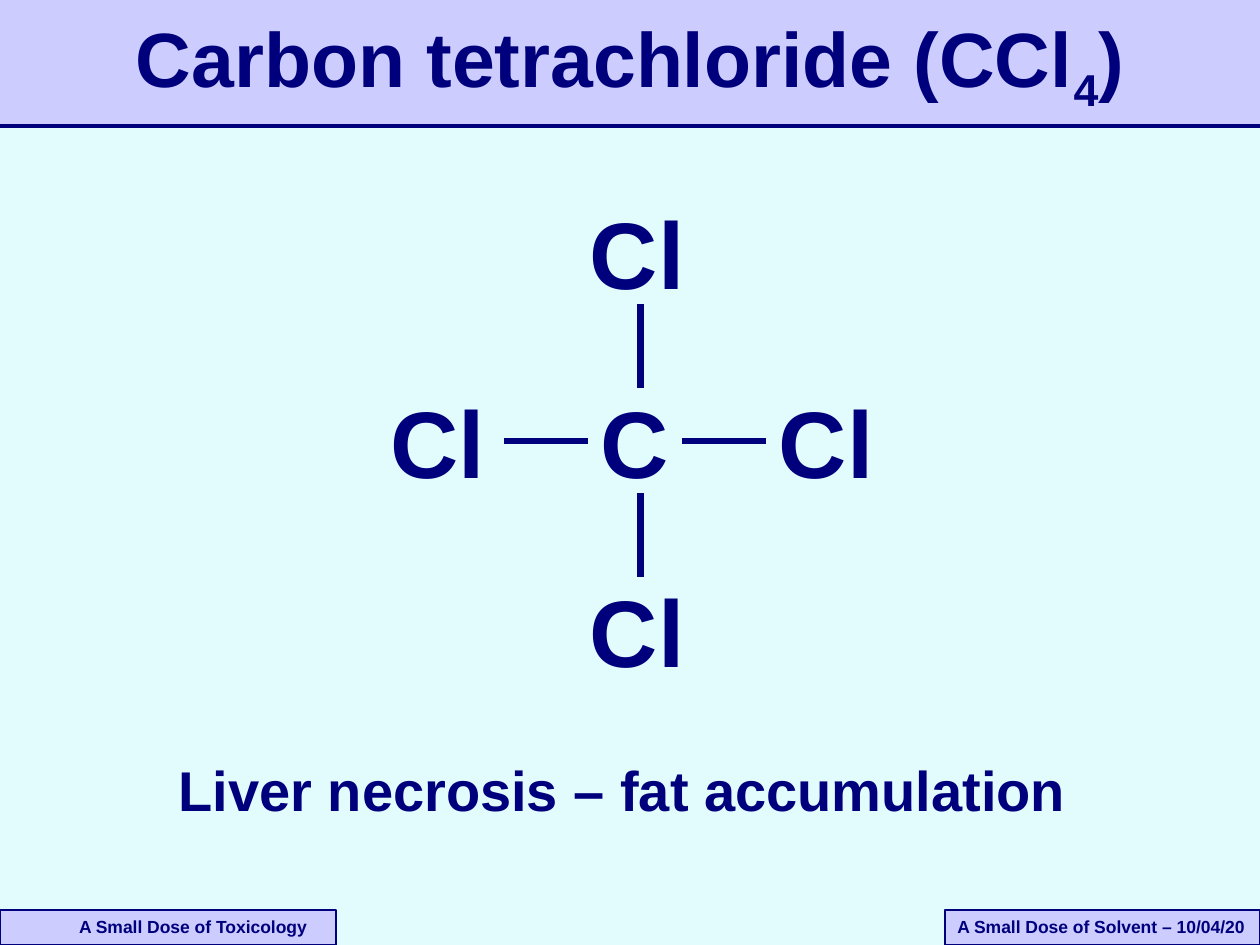
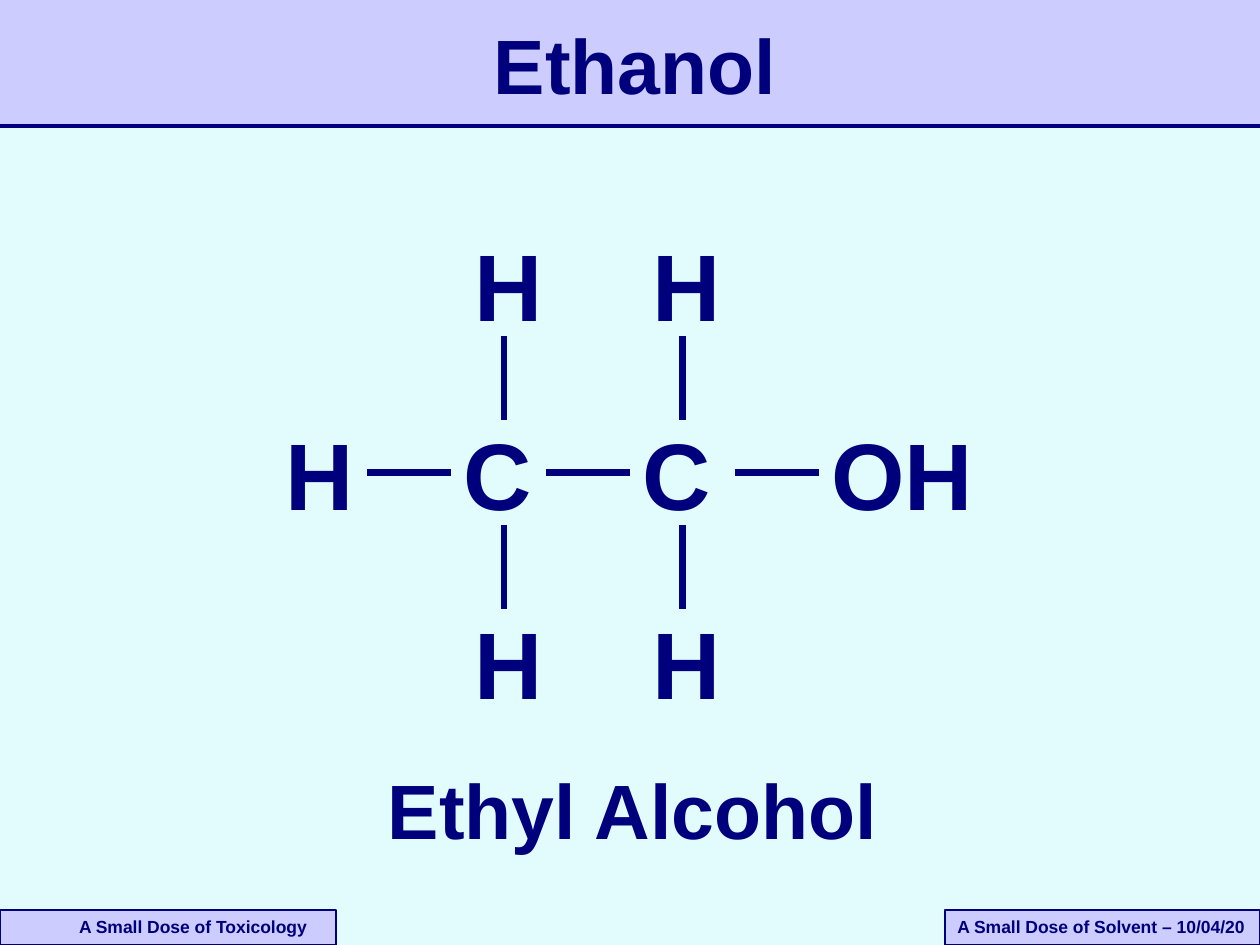
from pptx import Presentation
from pptx.dml.color import RGBColor
from pptx.enum.shapes import MSO_CONNECTOR, MSO_SHAPE
from pptx.enum.text import MSO_ANCHOR, PP_ALIGN
from pptx.oxml.ns import qn
from pptx.util import Pt
from lxml import etree

NAVY, LAVENDER, PALE_CYAN = "00007D", "CCCCFF", "E2FCFE"
FONT = "Arial"
WIDTH, HEIGHT = 720, 540
BAND_HEIGHT = 72
FOOTER_TOP, FOOTER_HEIGHT = 520, 20
TITLE_SIZE, ATOM_SIZE = 44, 54

# Distances inside a structure, measured from a carbon's text box
ROW_STEP = 108
BOND_LENGTH = 48
STEM_X, STEM_UP_Y, STEM_DOWN_Y = 30, -42, 66
BOND_Y, LEFT_BOND_X, RIGHT_BOND_X = 36, -48, 54
ATOM_HEIGHT = 72
ATOM_WIDTHS = {"C": 57.6, "H": 54, "Cl": 72, "OH": 96}


def color(value):
    return RGBColor.from_string(value)


def format_runs(p, size):
    for r in p.runs:
        r.font.name = FONT
        r.font.size = Pt(size)
        r.font.bold = True
        r.font.color.rgb = color(NAVY)


def add_text(s, text, x, y, w, h, size):
    sp = s.shapes.add_textbox(Pt(x), Pt(y), Pt(w), Pt(h))
    tf = sp.text_frame
    tf.word_wrap = True
    tf.text = text
    format_runs(tf.paragraphs[0], size)
    return sp


def add_line(s, x1, y1, x2, y2, weight):
    line = s.shapes.add_connector(MSO_CONNECTOR.STRAIGHT, Pt(x1), Pt(y1), Pt(x2), Pt(y2))
    line.line.color.rgb = color(NAVY)
    line.line.width = Pt(weight)
    etree.SubElement(line._element.spPr, qn("a:effectLst"))


def add_panel(s, x, y, w, h):
    sp = s.shapes.add_shape(MSO_SHAPE.RECTANGLE, Pt(x), Pt(y), Pt(w), Pt(h))
    sp.shadow.inherit = False
    sp.fill.solid()
    sp.fill.fore_color.rgb = color(LAVENDER)
    sp.line.fill.background()
    return sp


def add_footer(s, text, x, w, indent):
    sp = add_panel(s, x, FOOTER_TOP, w, FOOTER_HEIGHT)
    sp.line.color.rgb = color(NAVY)
    sp.line.width = Pt(0.75)
    tf = sp.text_frame
    tf.vertical_anchor = MSO_ANCHOR.TOP
    tf.word_wrap = True
    tf.margin_left = Pt(indent)
    tf.text = text
    p = tf.paragraphs[0]
    p.alignment = PP_ALIGN.LEFT
    format_runs(p, 10)


def add_base_slide(prs):
    s = prs.slides.add_slide(prs.slide_layouts[6])
    s.background.fill.solid()
    s.background.fill.fore_color.rgb = color(PALE_CYAN)
    add_panel(s, 0, 0, WIDTH, BAND_HEIGHT)
    add_line(s, 0, BAND_HEIGHT, WIDTH, BAND_HEIGHT, 2)
    add_footer(s, "A Small Dose of Solvent – 10/04/20", 540, 180, 7.2)
    add_footer(s, "A Small Dose of Toxicology", 0, 192, 45.2)
    return s


def add_title(s, parts, x, y, w):
    """Add a centred title; every second part is a subscript."""
    tf = add_text(s, "", x, y, w, 60, TITLE_SIZE).text_frame
    tf.vertical_anchor = MSO_ANCHOR.MIDDLE
    p = tf.paragraphs[0]
    p.alignment = PP_ALIGN.CENTER
    for i, part in enumerate(parts):
        r = p.add_run()
        r.text = part
        if i % 2:
            r.font._element.set("baseline", "-25000")
    format_runs(p, TITLE_SIZE)


def add_atom(s, symbol, x, y):
    add_text(s, symbol, x, y, ATOM_WIDTHS[symbol], ATOM_HEIGHT, ATOM_SIZE)


def add_bond(s, x, y, dx=0, dy=0):
    add_line(s, x, y, x + dx, y + dy, 3.5)


def add_carbon(s, x, y, partner, partner_dx):
    """Add a carbon with the same partner atom above and below it."""
    add_atom(s, "C", x, y)
    for row, stem_y in ((-1, STEM_UP_Y), (1, STEM_DOWN_Y)):
        add_atom(s, partner, x + partner_dx, y + row * ROW_STEP)
        add_bond(s, x + STEM_X, y + stem_y, dy=BOND_LENGTH)


def add_tetrachloride(s, x, y):
    add_carbon(s, x, y, "Cl", -6)
    for bond_x, atom_x in ((LEFT_BOND_X, -120), (RIGHT_BOND_X, 102)):
        add_bond(s, x + bond_x, y + BOND_Y, dx=BOND_LENGTH)
        add_atom(s, "Cl", x + atom_x, y)


def add_ethanol(s, x, y):
    carbon_step = RIGHT_BOND_X + BOND_LENGTH
    for i in range(2):
        add_carbon(s, x + i * carbon_step, y, "H", 6)
    hydroxyl_bond_x = carbon_step + 60
    for bond_x in (LEFT_BOND_X, RIGHT_BOND_X, hydroxyl_bond_x):
        add_bond(s, x + bond_x, y + BOND_Y, dx=BOND_LENGTH)
    add_atom(s, "H", x - carbon_step, y)
    add_atom(s, "OH", x + hydroxyl_bond_x + BOND_LENGTH, y)


def main():
    prs = Presentation()
    prs.slide_width, prs.slide_height = Pt(WIDTH), Pt(HEIGHT)

    s = add_base_slide(prs)
    add_title(s, ["Carbon tetrachloride (CCl", "4", ")"], 54, 6, 612)
    add_tetrachloride(s, 336, 216)
    add_text(s, "Liver necrosis – fat accumulation", 95, 428.4, 535, 45.4, 32)

    s = add_base_slide(prs)
    add_title(s, ["Ethanol"], 108, 6.5, 510)
    add_ethanol(s, 258, 234)
    add_text(s, "Ethyl Alcohol", 214.6, 432, 296, 60, TITLE_SIZE)

    prs.save("out.pptx")


if __name__ == "__main__":
    main()
